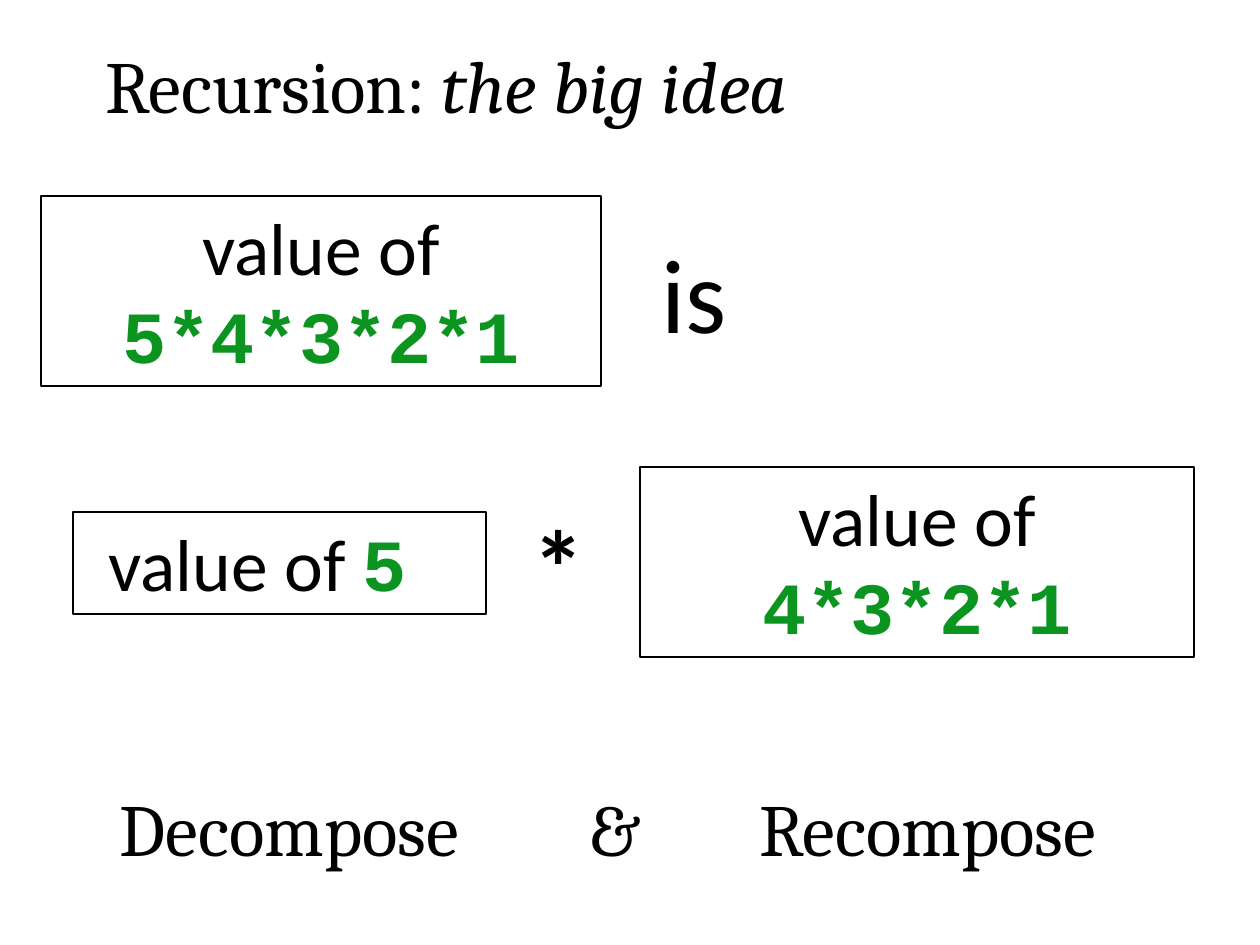
"""Build the slide that explains the big idea of recursion."""
import pptx
import pptx.dml.color
import pptx.enum.shapes
import pptx.enum.text
import pptx.util

PX = 914400 / 126
COLORS = {"ink": "000000", "code": "0B9520"}
CENTER = pptx.enum.text.PP_ALIGN.CENTER
LEFT = pptx.enum.text.PP_ALIGN.LEFT


def emu(*lengths):
    return [round(length * PX) for length in lengths]


def write(shape, pieces, font, size=42, align=CENTER, wrap=False):
    frame = shape.text_frame
    frame.word_wrap = wrap
    frame.auto_size = pptx.enum.text.MSO_AUTO_SIZE.SHAPE_TO_FIT_TEXT
    frame.vertical_anchor = pptx.enum.text.MSO_ANCHOR.TOP
    paragraph = frame.paragraphs[0]
    paragraph.alignment = align
    paragraph.font.size = pptx.util.Pt(size)
    runs = []
    for piece in pieces:
        run = paragraph.add_run()
        run.text = piece
        run.font.name = font
        run.font.color.rgb = pptx.dml.color.RGBColor.from_string(COLORS["ink"])
        runs.append(run)
    return runs


deck = pptx.Presentation()
deck.slide_width, deck.slide_height = emu(1260, 945)
slide = deck.slides.add_slide(deck.slide_layouts[5])

title = slide.shapes.title
title.left, title.top, title.width, title.height = emu(63, 34, 767, 102)
heading, idea = write(title, ["Recursion: ", "the big idea"], "Cambria")
idea.font.italic = True

values = [
    ("5*4*3*2*1", 41, 196, 560, 190),
    ("5 ", 73, 512, 413, 102),
    ("4*3*2*1", 640, 467, 554, 190),
]
for expression, *place in values:
    value = slide.shapes.add_shape(
        pptx.enum.shapes.MSO_SHAPE.RECTANGLE, *emu(*place))
    value.shadow.inherit = False
    value.fill.background()
    value.line.color.rgb = pptx.dml.color.RGBColor.from_string(COLORS["ink"])
    value.line.width = pptx.util.Pt(0.75)
    label, code = write(value, ["value of ", expression], "Calibri", wrap=True)
    code.font.name = "Courier New"
    code.font.bold = True
    code.font.color.rgb = pptx.dml.color.RGBColor.from_string(COLORS["code"])

words = [
    ("*", "Calibri", 60, LEFT, 520, 494, 78, 140),
    ("is", "Calibri", 60, LEFT, 649, 222, 93, 140),
    ("Decompose", "Cambria", 42, CENTER, 93, 777, 393, 102),
    ("&", "Cambria", 42, LEFT, 577, 777, 77, 102),
    ("Recompose", "Cambria", 42, CENTER, 733, 777, 389, 102),
]
for text, font, size, align, *place in words:
    word = slide.shapes.add_textbox(*emu(*place))
    write(word, [text], font, size, align)
    word.text_frame.paragraphs[0].font.bold = text == "*"

deck.save("out.pptx")
